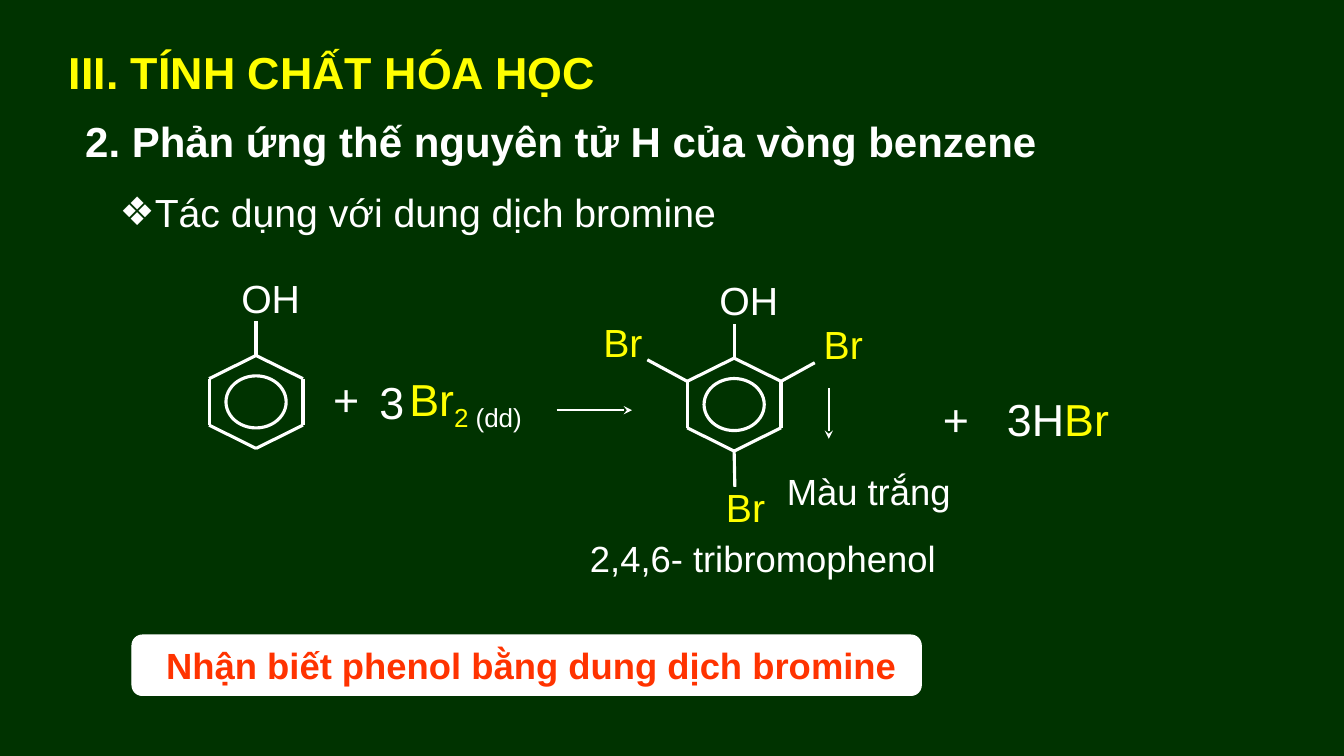
from lxml import etree
from pptx import Presentation
from pptx.dml.color import RGBColor
from pptx.enum.shapes import MSO_CONNECTOR, MSO_SHAPE
from pptx.enum.text import MSO_ANCHOR, MSO_AUTO_SIZE, PP_ALIGN
from pptx.oxml.ns import qn
from pptx.util import Pt

LEFT, CENTER = PP_ALIGN.LEFT, PP_ALIGN.CENTER
TOP, MIDDLE, BOTTOM = MSO_ANCHOR.TOP, MSO_ANCHOR.MIDDLE, MSO_ANCHOR.BOTTOM
NO_AUTOFIT = MSO_AUTO_SIZE.NONE
STRAIGHT = MSO_CONNECTOR.STRAIGHT
OVAL, ROUNDED = MSO_SHAPE.OVAL, MSO_SHAPE.ROUNDED_RECTANGLE

FONT = "Arial"
COLORS = {"board": "003300", "chalk": "FFFFFF", "bromine": "FFFF00", "alert": "FF3300"}

HEADING = "III. TÍNH CHẤT HÓA HỌC"
SUBHEADING = "2. Phản ứng thế nguyên tử H của vòng benzene"
REACTION = "Tác dụng với dung dịch bromine"
BULLET = "❖"
CONCLUSION = " Nhận biết phenol bằng dung dịch bromine"

EQUATION = [
    ([("+", "chalk", 0)], (237.9, 265.7)),
    ([("3", "chalk", 0)], (271, 267.8)),
    ([("Br", "bromine", 0), ("2", "bromine", -25), (" (dd)", "chalk", -25)], (292.4, 265.7)),
    ([("+", "chalk", 0)], (673.6, 280)),
    ([("3H", "chalk", 0), ("Br", "bromine", 0)], (719.2, 280)),
]
CAPTIONS = [
    ("Màu trắng", (562, 334.8)),
    ("2,4,6- tribromophenol", (421.4, 383)),
]
ARROWS = [((397.6, 293), (451.4, 293)), ((592, 277.4), (592, 313.4))]

RING_HALF_WIDTH, RING_HALF_HEIGHT = 33.5, 33.2
CIRCLE_WIDTH, CIRCLE_HEIGHT = 43, 37.2
CORNERS = [
    (0, -RING_HALF_HEIGHT),
    (RING_HALF_WIDTH, -RING_HALF_HEIGHT / 2),
    (RING_HALF_WIDTH, RING_HALF_HEIGHT / 2),
    (0, RING_HALF_HEIGHT),
    (-RING_HALF_WIDTH, RING_HALF_HEIGHT / 2),
    (-RING_HALF_WIDTH, -RING_HALF_HEIGHT / 2),
]
HYDROXYL = ("OH", "chalk", 0, (0, -57.6), (-10.5, -91.3))
BROMINES = [
    ("Br", "bromine", 1, (57.6, -29.9), (64, -60.1)),
    ("Br", "bromine", 3, (0.5, 58.7), (-5.8, 56.5)),
    ("Br", "bromine", 5, (-62, -32), (-93.4, -61.6)),
]
MOLECULES = [
    ((182.9, 287.1), [HYDROXYL]),
    ((524.4, 289), [HYDROXYL] + BROMINES),
]


def rgb(color):
    return RGBColor.from_string(COLORS[color])


def place(item, left, top, width, height):
    item.left, item.top, item.width, item.height = Pt(left), Pt(top), Pt(width), Pt(height)


def write(holder, text, size=28, color="chalk", bold=False, align=LEFT, anchor=TOP):
    frame = holder.text_frame
    frame.word_wrap = True
    frame.auto_size = NO_AUTOFIT
    frame.vertical_anchor = anchor
    frame.margin_left = frame.margin_right = frame.margin_top = frame.margin_bottom = 0
    paragraph = frame.paragraphs[0]
    paragraph.alignment = align
    paragraph.space_before = Pt(0)
    parts = [(text, color, 0)] if isinstance(text, str) else text
    for words, ink, baseline in parts:
        run = paragraph.add_run()
        run.text = words
        run.font.name, run.font.size, run.font.bold = FONT, Pt(size), bold
        run.font.color.rgb = rgb(ink)
        if baseline:
            run._r.get_or_add_rPr().set("baseline", str(baseline * 1000))
    return paragraph


def label(slide, text, left, top, width=200, height=36, **style):
    box = slide.shapes.add_textbox(Pt(left), Pt(top), Pt(width), Pt(height))
    write(box, text, **style)


def add_bullet(paragraph, indent):
    props = paragraph._p.get_or_add_pPr()
    props.set("marL", str(Pt(indent)))
    props.set("indent", str(-Pt(indent)))
    tint = etree.SubElement(props, qn("a:buClr"))
    etree.SubElement(tint, qn("a:srgbClr"), val=COLORS["chalk"])
    etree.SubElement(props, qn("a:buFont"), typeface=FONT)
    etree.SubElement(props, qn("a:buChar"), char=BULLET)


def outline(shape, width=2.25):
    shape.shadow.inherit = False
    shape.line.color.rgb = rgb("chalk")
    shape.line.width = Pt(width)


def connect(slide, start, end, width=2.25, arrow=False):
    line = slide.shapes.add_connector(STRAIGHT, *(Pt(v) for v in (*start, *end)))
    line.line.color.rgb = rgb("chalk")
    line.line.width = Pt(width)
    props = line._element.spPr
    if arrow:
        etree.SubElement(props.find(qn("a:ln")), qn("a:tailEnd"), type="stealth")
    etree.SubElement(props, qn("a:effectLst"))


def draw_molecule(slide, center, groups):
    def shift(offset):
        return center[0] + offset[0], center[1] + offset[1]

    for start, end in zip(CORNERS, CORNERS[1:] + CORNERS[:1]):
        connect(slide, shift(start), shift(end))
    left, top = shift((-CIRCLE_WIDTH / 2, -CIRCLE_HEIGHT / 2))
    circle = slide.shapes.add_shape(OVAL, Pt(left), Pt(top), Pt(CIRCLE_WIDTH), Pt(CIRCLE_HEIGHT))
    circle.fill.background()
    outline(circle)
    for name, color, corner, bond_end, name_at in groups:
        connect(slide, shift(CORNERS[corner]), shift(bond_end))
        label(slide, name, *shift(name_at), width=56, height=34, color=color)


def main():
    deck = Presentation()
    deck.slide_width, deck.slide_height = Pt(960), Pt(540)
    slide = deck.slides.add_slide(deck.slide_layouts[1])
    slide.background.fill.solid()
    slide.background.fill.fore_color.rgb = rgb("board")

    heading, reaction = slide.placeholders
    place(heading, 49.2, 36, 395, 34.6)
    write(heading, HEADING, size=32, color="bromine", bold=True, anchor=BOTTOM)
    label(slide, SUBHEADING, 60.9, 82.6, width=814, size=30, bold=True)
    place(reaction, 85.5, 134.4, 430, 34)
    add_bullet(write(reaction, REACTION), indent=24.3)

    for center, groups in MOLECULES:
        draw_molecule(slide, center, groups)
    for text, at in EQUATION:
        label(slide, text, *at, size=32)
    for text, at in CAPTIONS:
        label(slide, text, *at, width=264, size=26)
    for start, end in ARROWS:
        connect(slide, start, end, width=1.5, arrow=True)

    conclusion = slide.shapes.add_shape(ROUNDED, Pt(94.3), Pt(453.6), Pt(563.8), Pt(43.2))
    conclusion.adjustments[0] = 0.17
    conclusion.fill.solid()
    conclusion.fill.fore_color.rgb = rgb("chalk")
    outline(conclusion, width=0.75)
    write(conclusion, CONCLUSION, size=26, color="alert", bold=True, align=CENTER, anchor=MIDDLE)

    deck.save("out.pptx")


if __name__ == "__main__":
    main()
